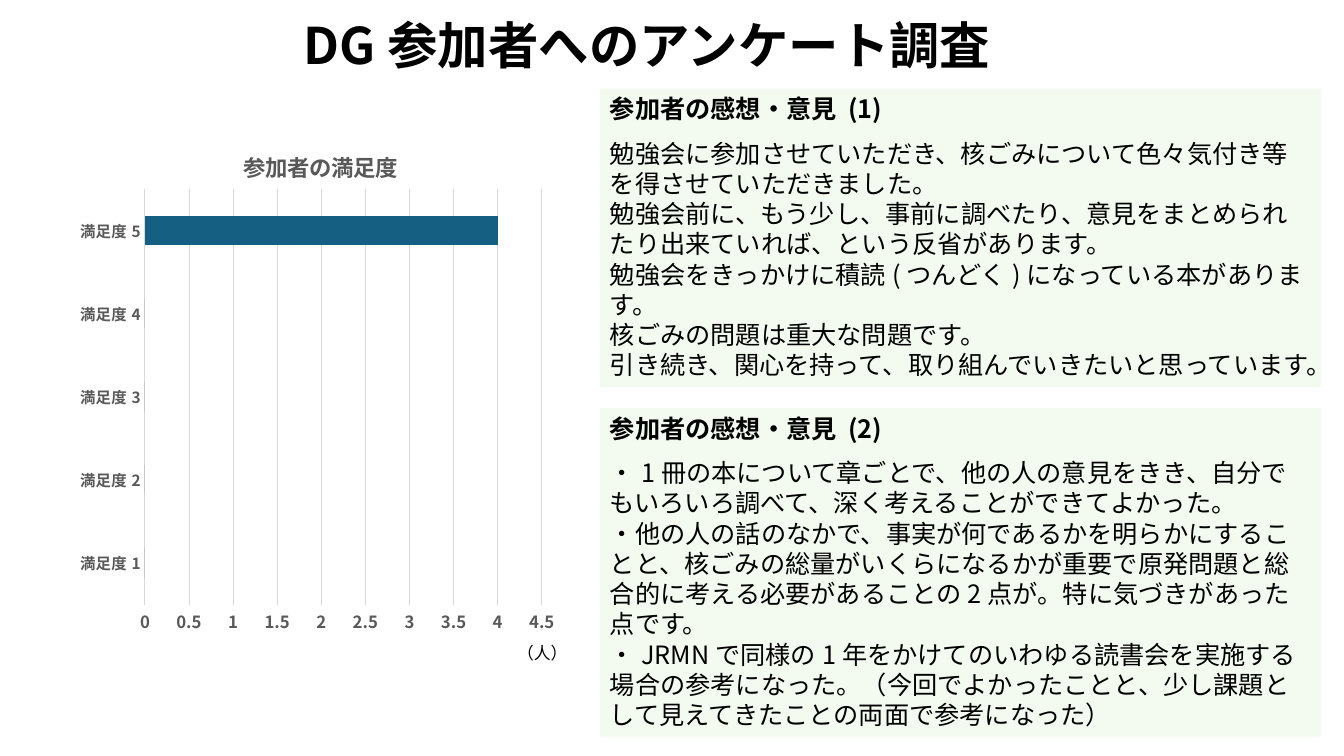
from lxml.etree import SubElement
from pptx import Presentation
from pptx.chart.data import CategoryChartData
from pptx.dml.color import RGBColor
from pptx.enum.chart import XL_CHART_TYPE as ChartType, XL_TICK_MARK as TickMark
from pptx.enum.shapes import MSO_SHAPE as Shape
from pptx.enum.text import MSO_ANCHOR as Anchor, PP_ALIGN as Align
from pptx.oxml.ns import qn
from pptx.oxml.xmlchemy import OxmlElement
from pptx.util import Inches, Pt

FONT = "Noto Sans CJK JP"
BLACK = RGBColor(0x00, 0x00, 0x00)
GRAY = RGBColor(0x59, 0x59, 0x59)
GRID = RGBColor(0xD9, 0xD9, 0xD9)
BLUE = RGBColor(0x15, 0x60, 0x82)
GREEN = RGBColor(0xD9, 0xF2, 0xD0)

LINE_HEIGHT = 1.2
PANEL_LEFT, PANEL_WIDTH = 5.95, 7.15

# top, height, heading, comments
PANELS = [
    (0.88, 2.96, "参加者の感想・意見 (1)", [
        "勉強会に参加させていただき、核ごみについて色々気付き等を得させていただきました。",
        "勉強会前に、もう少し、事前に調べたり、意見をまとめられたり出来ていれば、という反省があります。",
        "勉強会をきっかけに積読(つんどく)になっている本があります。",
        "核ごみの問題は重大な問題です。",
        "引き続き、関心を持って、取り組んでいきたいと思っています。",
    ]),
    (4.05, 3.26, "参加者の感想・意見 (2)", [
        "・1冊の本について章ごとで、他の人の意見をきき、自分でもいろいろ調べて、深く考えることができてよかった。",
        "・他の人の話のなかで、事実が何であるかを明らかにすることと、核ごみの総量がいくらになるかが重要で"
        "原発問題と総合的に考える必要があることの2点が。特に気づきがあった点です。",
        "・JRMNで同様の1年をかけてのいわゆる読書会を実施する場合の参考になった。"
        "（今回でよかったことと、少し課題として見えてきたことの両面で参考になった）",
    ]),
]
SATISFACTION = {"満足度1": 0, "満足度2": 0, "満足度3": 0, "満足度4": 0, "満足度5": 4}


def style(font, size, color=BLACK, bold=False):
    """Set the font for both Latin and Japanese text."""
    font.size, font.bold, font.name = Pt(size), bold, FONT
    font.color.rgb = color
    SubElement(font._element, qn("a:ea"), typeface=FONT)


def write(p, text, size, bold=False):
    p.text = text
    p.alignment = Align.LEFT
    p.line_spacing = Pt(round(size * LINE_HEIGHT, 1))
    style(p.font, size, bold=bold)


def add_label(slide, box, text, size, bold=False):
    tf = slide.shapes.add_textbox(*map(Inches, box)).text_frame
    tf.word_wrap = True
    write(tf.paragraphs[0], text, size, bold)


def add_panel(slide, top, height, heading, comments):
    box = (PANEL_LEFT, top, PANEL_WIDTH, height)
    sp = slide.shapes.add_shape(Shape.RECTANGLE, *map(Inches, box))
    sp.shadow.inherit = False
    sp.line.fill.background()
    sp.fill.solid()
    sp.fill.fore_color.rgb = GREEN
    srgb = next(sp._element.spPr.iter(qn("a:srgbClr")))
    SubElement(srgb, qn("a:alpha"), val="31000")

    tf = sp.text_frame
    tf.word_wrap = True
    tf.vertical_anchor = Anchor.TOP
    write(tf.paragraphs[0], heading, 18, bold=True)
    for i, comment in enumerate(comments):
        p = tf.add_paragraph()
        write(p, comment, 18)
        if i == 0:
            p.space_before = Pt(10)


def place(parent, **settings):
    """Give a chart title or plot area a fixed place, in shares of the chart."""
    for old in parent.findall(qn("c:layout")):
        parent.remove(old)
    layout = OxmlElement("c:layout")
    manual = SubElement(layout, qn("c:manualLayout"))
    for name, value in settings.items():
        SubElement(manual, qn(f"c:{name}"), val=str(value))
    text = parent.find(qn("c:tx"))
    parent.insert(0 if text is None else 1, layout)


def add_satisfaction_chart(slide, box):
    data = CategoryChartData()
    data.categories = list(SATISFACTION)
    data.add_series("Series 1", list(SATISFACTION.values()))
    chart = slide.shapes.add_chart(
        ChartType.BAR_CLUSTERED, *map(Inches, box), data).chart
    style(chart.font, 10)
    chart.has_legend = False

    title = chart.chart_title
    p = title.text_frame.paragraphs[0]
    p.text = "参加者の満足度"
    style(p.font, 16, GRAY, bold=True)
    place(title._element, xMode="edge", yMode="edge", x=0.34, y=0.05)
    place(chart._chartSpace.chart.plotArea, layoutTarget="inner",
          xMode="edge", yMode="edge", x=0.15, y=0.135, w=0.8, h=0.79)

    plot = chart.plots[0]
    plot.gap_width = 182
    plot.vary_by_categories = False
    fill = plot.series[0].format.fill
    fill.solid()
    fill.fore_color.rgb = BLUE

    values, categories = chart.value_axis, chart.category_axis
    for axis, size in ((categories, 11), (values, 12)):
        axis.major_tick_mark = axis.minor_tick_mark = TickMark.NONE
        style(axis.tick_labels.font, size, GRAY, bold=True)
    values.minimum_scale, values.maximum_scale, values.major_unit = 0, 4.5, 0.5
    values.format.line.fill.background()
    for line in (categories.format.line, values.major_gridlines.format.line):
        line.color.rgb = GRID
        line.width = Pt(0.75)


def main():
    prs = Presentation()
    prs.slide_width, prs.slide_height = Inches(13.33), Inches(7.5)
    slide = prs.slides.add_slide(prs.slide_layouts[6])
    add_label(slide, (2.91, 0.09, 8.6, 0.71), "DG参加者へのアンケート調査", 36, bold=True)
    add_satisfaction_chart(slide, (0.7, 1.17, 4.92, 5.22))
    add_label(slide, (5.03, 6.33, 0.74, 0.3), "（人）", 12)
    for panel in PANELS:
        add_panel(slide, *panel)
    prs.save("out.pptx")


if __name__ == "__main__":
    main()
